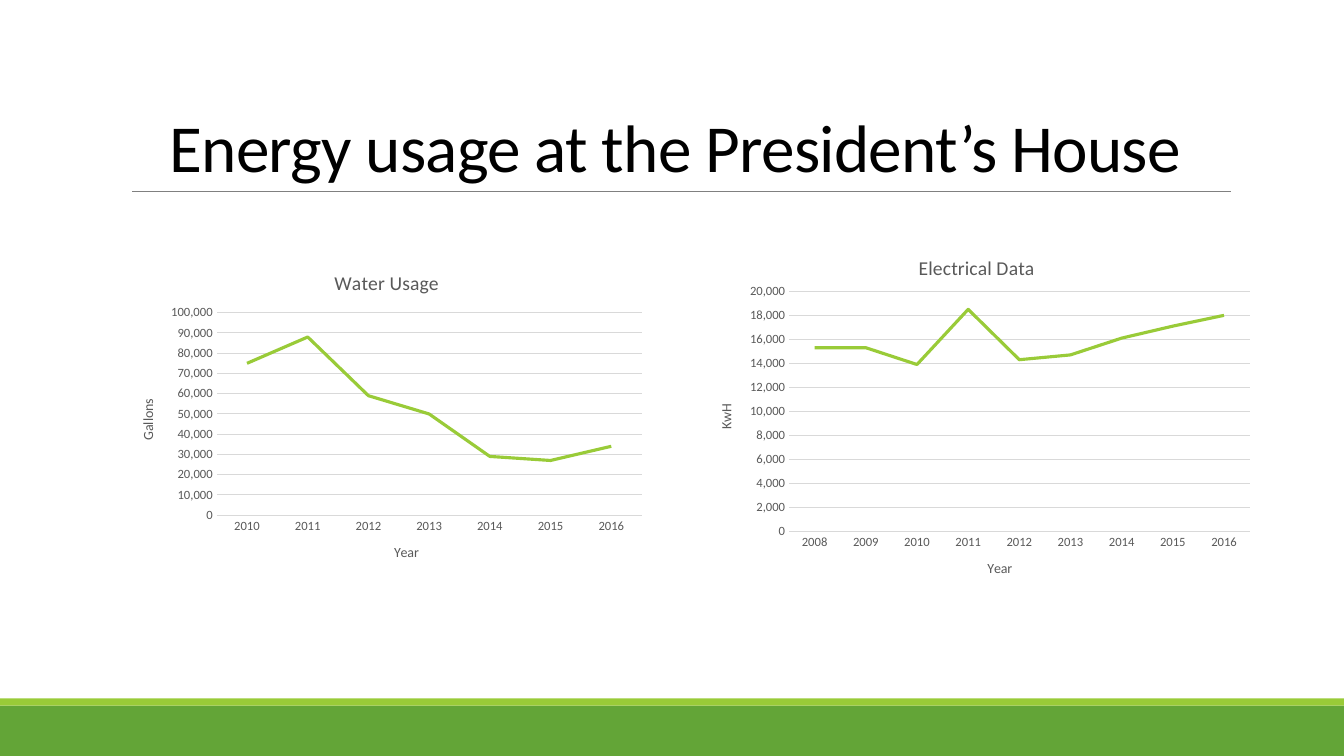
from dataclasses import dataclass
from pptx import Presentation
from pptx.chart.data import CategoryChartData as Data
from pptx.dml.color import RGBColor as Rgb
from pptx.enum.chart import XL_CHART_TYPE as Kind, XL_TICK_MARK as Tick
from pptx.enum.shapes import MSO_CONNECTOR as Link, MSO_SHAPE as Form
from pptx.enum.text import MSO_ANCHOR as Anchor, PP_ALIGN as Align
from pptx.oxml import parse_xml
from pptx.oxml.ns import nsdecls, qn
from pptx.util import Cm, Pt


@dataclass(frozen=True)
class Theme:
    font: str = "Calibri"
    black: str = "000000"
    gray: str = "595959"
    grid: str = "D9D9D9"
    rule: str = "808080"
    green: str = "63A537"
    lime: str = "99CB38"
    title: float = 48
    head: float = 14
    label: float = 10
    tick: float = 9


theme = Theme()
WIDE, HIGH = 33.87, 19.05


def assign(item, values):
    for name, value in values.items():
        setattr(item, name, value)


def style(font, size, color):
    assign(font, {"name": theme.font, "size": Pt(size), "bold": False})
    font.color.rgb = Rgb.from_string(color)


def stroke(line, color, width):
    line.color.rgb = Rgb.from_string(color)
    line.width = Pt(width)


# Footer: a green band under a thin lime stripe
def add_foot(slide, box):
    left, top, width, height = box
    thin = 0.18
    for color, y, tall in ((theme.green, top + thin, height - thin),
                           (theme.lime, top, thin)):
        band = slide.shapes.add_shape(
            Form.RECTANGLE, Cm(left), Cm(y), Cm(width), Cm(tall))
        band.shadow.inherit = False
        band.fill.solid()
        band.fill.fore_color.rgb = Rgb.from_string(color)
        band.line.fill.background()


# Heading: bottom-anchored title with a rule beneath it
def add_head(slide, box, text):
    left, top, width, height = box
    low = Cm(top + height)
    rule = slide.shapes.add_connector(
        Link.STRAIGHT, Cm(left + 0.28), low, Cm(left + width + 0.02), low)
    stroke(rule.line, theme.rule, 0.5)
    rule._element.spPr.append(parse_xml(f"<a:effectLst {nsdecls('a')}/>"))

    frame = slide.shapes.add_textbox(*map(Cm, box)).text_frame
    assign(frame, {"word_wrap": True, "vertical_anchor": Anchor.BOTTOM})
    para = frame.paragraphs[0]
    assign(para, {"alignment": Align.CENTER, "line_spacing": 0.85})
    run = para.add_run()
    run.text = text
    style(run.font, theme.title, theme.black)
    run.font._element.set("spc", "-50")


def set_title(owner, text, size):
    owner.has_title = True
    title = owner.chart_title if hasattr(owner, "chart_title") else owner.axis_title
    run = title.text_frame.paragraphs[0].add_run()
    run.text = text
    style(run.font, size, theme.gray)


# Inner plot area, as fractions of the chart
def set_plot(chart, plot):
    area = chart._chartSpace.chart.plotArea
    for old in area.findall(qn("c:layout")):
        area.remove(old)
    parts = "".join(f'<c:{tag} val="{value}"/>'
                    for tag, value in zip("xywh", plot))
    area.insert(0, parse_xml(
        f'<c:layout {nsdecls("c")}><c:manualLayout>'
        '<c:layoutTarget val="inner"/><c:xMode val="edge"/><c:yMode val="edge"/>'
        f'{parts}</c:manualLayout></c:layout>'))


# Line chart of one yearly series
def add_graph(slide, box, title, name, unit, first, values, top, step, plot):
    data = Data(number_format="#,##0")
    data.categories = [str(first + i) for i in range(len(values))]
    data.add_series(name, values)
    chart = slide.shapes.add_chart(Kind.LINE, *map(Cm, box), data).chart
    chart.has_legend = False
    style(chart.font, theme.label, theme.black)
    set_title(chart, title, theme.head)
    set_plot(chart, plot)

    years, scale = chart.category_axis, chart.value_axis
    for axis, text in ((years, "Year"), (scale, unit)):
        assign(axis, {"major_tick_mark": Tick.NONE, "minor_tick_mark": Tick.NONE})
        style(axis.tick_labels.font, theme.tick, theme.gray)
        set_title(axis, text, theme.label)
    stroke(years.format.line, theme.grid, 0.75)
    assign(scale, {"minimum_scale": 0, "maximum_scale": top, "major_unit": step,
                   "has_major_gridlines": True})
    assign(scale.tick_labels, {"number_format": "#,##0",
                               "number_format_is_linked": False})
    stroke(scale.major_gridlines.format.line, theme.grid, 0.75)
    scale.format.line.fill.background()

    chart.plots[0].vary_by_categories = False
    series = chart.plots[0].series[0]
    series.smooth = False
    stroke(series.format.line, theme.lime, 2.25)


def main():
    deck = Presentation()
    assign(deck, {"slide_width": Cm(WIDE), "slide_height": Cm(HIGH)})
    slide = deck.slides.add_slide(deck.slide_layouts[6])
    add_foot(slide, (0, 17.6, WIDE, HIGH - 17.6))
    add_head(slide, (3.05, 0.79, 27.94, 4.04),
             "Energy usage at the President’s House")
    add_graph(slide, (3.05, 6.4, 13.39, 8.23), "Water Usage", "Series 1",
              "Gallons", 2010,
              (75000, 88000, 59000, 50000, 29000, 27000, 34000),
              100000, 10000, (0.18, 0.18, 0.8, 0.62))
    add_graph(slide, (17.45, 5.99, 14.33, 9.02), "Electrical Data",
              "Electrical Data", "KwH", 2008,
              (15300, 15300, 13900, 18500, 14300, 14700, 16100, 17100, 18000),
              20000, 2000, (0.17, 0.15, 0.81, 0.67))
    deck.save("out.pptx")


if __name__ == "__main__":
    main()
